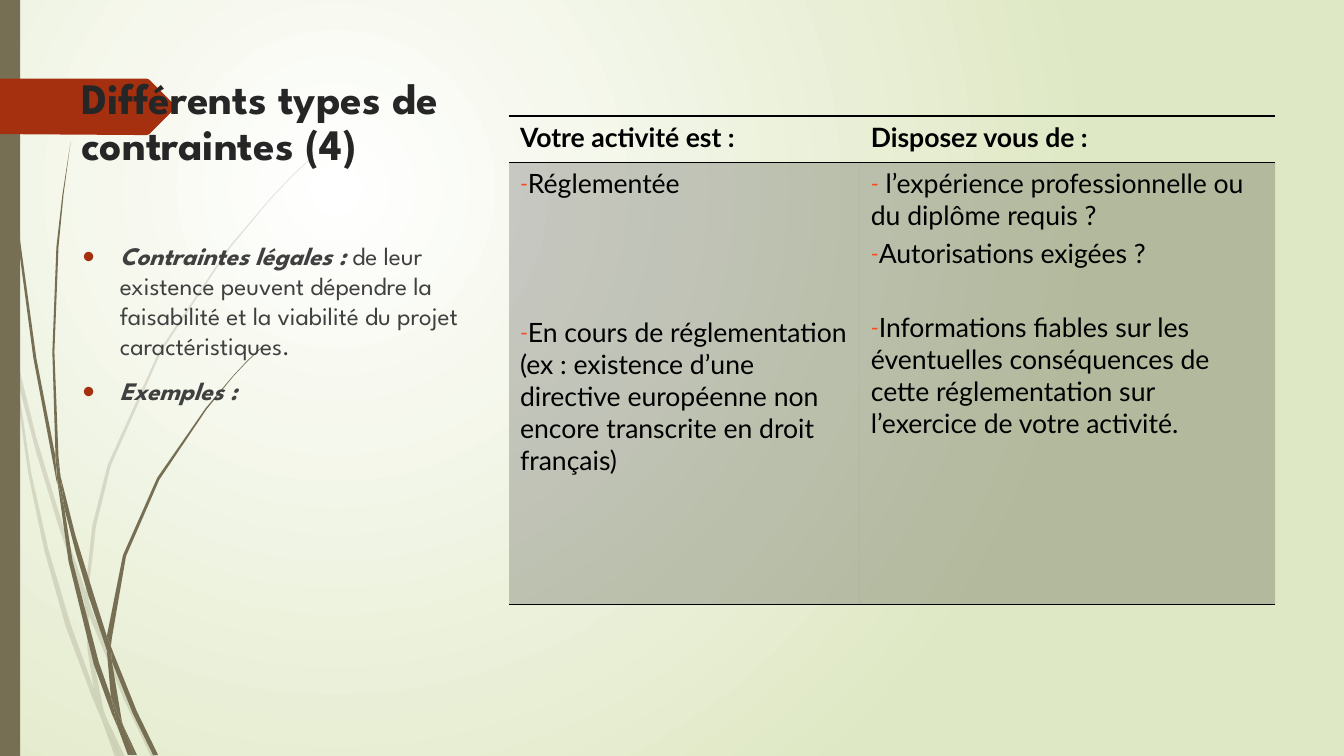
"""Build the slide on legal constraints with its activity table."""
from lxml.etree import SubElement
from pptx import Presentation
from pptx.dml.color import RGBColor
from pptx.enum.shapes import MSO_SHAPE
from pptx.enum.text import MSO_ANCHOR
from pptx.oxml.ns import qn
from pptx.util import Pt

COLOURS = {"white": "FFFFFF", "green": "DFE8C4", "olive": "766F54", "rust": "A53010",
           "title": "262626", "body": "404040", "ink": "000000", "dash": "FB4A18"}
FORMATS = {
    "title": {"name": "League Spartan", "size": Pt(31), "bold": True},
    "body": {"name": "League Spartan", "size": Pt(18), "bold": False, "italic": False},
    "strong": {"name": "League Spartan", "size": Pt(18), "bold": True, "italic": True},
    "header": {"name": "Lato", "size": Pt(19), "bold": True},
    "cell": {"name": "Lato", "size": Pt(19), "bold": False},
}

TITLE = "Différents types de contraintes (4)"
CONSTRAINTS = [
    [("Contraintes légales :", "strong"),
     (" de leur existence peuvent dépendre la faisabilité et la viabilité du projet "
      "caractéristiques.", "body")],
    [("Exemples :", "strong")],
]
HEADERS = ["Votre activité est :", "Disposez vous de :"]
ANSWERS = [
    [(0, "Réglementée"),
     (83.5, "En cours de réglementation (ex : existence d’une directive européenne non "
            "encore transcrite en droit français)")],
    [(0, " l’expérience professionnelle ou du diplôme requis ?"),
     (4.5, "Autorisations exigées ?"),
     (30, "Informations fiables sur les éventuelles conséquences de cette réglementation "
          "sur l’exercice de votre activité.")],
]
COLUMN_WIDTHS = [250.6, 296.6]
ROW_HEIGHTS = [33.3, 315.9]

FAINT_STALKS = [
    [(7.9, 252), (6.5, 231.8), (0, 203), (0, 215.3), (7.2, 247.7)],
    [(41.8, 375.8), (60.5, 431.3), (61.2, 421.9), (44.6, 374.4), (25.9, 312.5),
     (10.1, 248.4), (12.2, 270.7), (25.9, 323.3)],
    [(66.2, 437), (63.4, 429.1), (63.4, 439.2), (88.6, 499.7), (108, 540.7),
     (111.6, 540.7), (91.4, 498.2)],
    [(85.7, 540.7), (89.3, 540.7), (75.6, 511.9)],
    [(67, 491.8), (50.4, 445.7), (34.5, 392.2), (22.3, 337.7), (12.2, 270.7), (7.9, 252),
     (20.2, 338.4), (31.6, 393), (46.8, 447.1), (66.2, 499), (72.7, 514.1), (71.3, 509)],
    [(60.5, 431.3), (62.6, 465.1), (67, 491.8), (69.1, 498.2), (75.6, 511.9),
     (74.2, 508.3), (65.5, 465.1), (63.4, 439.2), (63.4, 437.8)],
    [(63.4, 420.5), (68.6, 375.8), (79.2, 332.6), (115.2, 251.3), (164.9, 176.4),
     (193, 142.6), (208.8, 126), (224.6, 110.9), (224.6, 110.2), (208.1, 126),
     (193, 141.8), (164.2, 175.7), (113.8, 250.6), (77, 331.9), (65.9, 375.8),
     (61.2, 420.5), (61.2, 421.9), (63.4, 429.1)],
    [(72.7, 514.1), (82.1, 540.7), (85.7, 540.7)],
    [(63.4, 437.8), (63.4, 429.1), (61.2, 421.9), (60.5, 431.3)],
    [(69.1, 498.2), (67, 491.8), (71.3, 509), (72.7, 514.1), (85.7, 540.7), (75.6, 511.9)],
]
DARK_STALKS = [
    [(5, 79.2), (12.2, 167.8), (23.8, 255.6), (40.3, 343.4), (41, 346.3), (39.6, 329),
     (39.6, 326.2), (25.9, 255.6), (13.7, 167), (5.8, 78.5), (3.6, 34.6), (2.9, 0),
     (2.2, 0), (2.9, 34.6)],
    [(63.4, 426.2), (76.3, 464.4), (76.3, 454.3), (67, 424.8), (54, 382.9), (43.2, 339.8),
     (46.1, 363.6), (54.2, 394.9)],
    [(81.4, 467.3), (79.2, 461.5), (79.9, 472.3), (95, 509.8), (109.4, 539.3),
     (113, 539.3), (97.9, 508.3)],
    [(79.2, 497.5), (70.6, 473), (51.8, 400.3), (46.1, 363.6), (41, 343.4), (49, 401),
     (67, 474.5), (79.9, 509.8), (84.2, 519.8), (83.5, 516.2)],
    [(43.2, 339.8), (41.8, 326.2), (38.9, 251.3), (41.8, 176.4), (45.4, 139),
     (50.4, 101.5), (44.6, 139), (40.3, 176.4), (37.4, 251.3), (39.6, 323.3)],
    [(95.8, 539.3), (97.9, 539.3), (87.8, 517.7)],
    [(41, 343.4), (46.1, 363.6), (43.2, 339.8), (39.6, 323.3), (39.6, 326.2)],
    [(79.9, 455.8), (90, 397.4), (113.8, 342.7), (147.6, 292.3), (166.3, 269.3),
     (176.4, 258.5), (187.9, 247.7), (187.2, 247.7), (176.4, 257.8), (166.3, 268.6),
     (146.9, 291.6), (112.3, 341.3), (87.8, 396.7), (76.3, 454.3), (79.2, 461.5)],
    [(84.2, 519.8), (91.4, 539.3), (94.3, 539.3)],
    [(76.3, 464.4), (79.2, 497.5), (83.5, 508.3), (87.8, 517.7), (87.1, 515.5),
     (79.9, 472.3), (78.5, 468.7)],
    [(76.3, 464.4), (78.5, 468.7), (79.9, 472.3), (79.2, 461.5), (76.3, 454.3)],
    [(83.5, 508.3), (79.2, 497.5), (83.5, 516.2), (84.2, 519.8), (93.6, 539.3),
     (95.8, 539.3), (87.8, 517.7)],
]
MARKER = [(0, 56.2), (105, 56.2), (106.6, 56.9), (124.6, 74.9), (125.2, 76.3),
          (124.6, 77.8), (106.6, 95.8), (105, 96.5), (0, 95.8)]


def rgb(colour):
    return RGBColor.from_string(COLOURS[colour])


def paint(fill, colour, holder, opacity=100):
    fill.solid()
    fill.fore_color.rgb = rgb(colour)
    if opacity < 100:
        tint = holder.find(qn("a:solidFill")).find(qn("a:srgbClr"))
        SubElement(tint, qn("a:alpha"), val=str(opacity * 1000))


def finish(shape, colour, opacity=100):
    shape.shadow.inherit = False
    shape.line.fill.background()
    paint(shape.fill, colour, shape._element.spPr, opacity)


def write(paragraph, text, style, colour):
    run = paragraph.add_run()
    run.text = text
    for attribute, value in FORMATS[style].items():
        setattr(run.font, attribute, value)
    run.font.color.rgb = rgb(colour)


def add_bullet(paragraph, character, colour, hang=0, percent=100):
    properties = paragraph._p.get_or_add_pPr()
    properties.set("marL", str(Pt(hang)))
    properties.set("indent", str(-Pt(hang)))
    SubElement(SubElement(properties, qn("a:buClr")), qn("a:srgbClr"), val=COLOURS[colour])
    SubElement(properties, qn("a:buSzPct"), val=str(percent * 1000))
    SubElement(properties, qn("a:buFont"), typeface="Lato")
    SubElement(properties, qn("a:buChar"), char=character)


def paragraph_at(frame, index):
    return frame.add_paragraph() if index else frame.paragraphs[0]


def add_outline(slide, corners, colour, opacity=100):
    start, *rest = [(Pt(x), Pt(y)) for x, y in corners]
    builder = slide.shapes.build_freeform(*start)
    builder.add_line_segments(rest, close=True)
    finish(builder.convert_to_shape(), colour, opacity)


def add_text_frame(slide, top, height):
    frame = slide.shapes.add_textbox(Pt(51.1), Pt(top), Pt(287.3), Pt(height)).text_frame
    frame.word_wrap = True
    frame.vertical_anchor = MSO_ANCHOR.TOP
    return frame


def add_backdrop(slide):
    fill = slide.background.fill
    fill.gradient()
    for stop, colour, position in zip(fill.gradient_stops, ("white", "green"), (0, 1)):
        stop.color.rgb = rgb(colour)
        stop.position = position
    gradient = next(slide._element.iter(qn("a:gradFill")))
    gradient.remove(gradient.find(qn("a:lin")))
    glow = SubElement(gradient, qn("a:path"), path="circle")
    SubElement(glow, qn("a:fillToRect"), l="50000", t="50000", r="100000", b="100000")
    for stalks, opacity in ((FAINT_STALKS, 20), (DARK_STALKS, 100)):
        for corners in stalks:
            add_outline(slide, corners, "olive", opacity)
    band = slide.shapes.add_shape(MSO_SHAPE.RECTANGLE, 0, 0, Pt(14.4), Pt(540))
    finish(band, "olive")
    add_outline(slide, MARKER, "rust")


def add_border(cell, position, side):
    line = cell._tc.get_or_add_tcPr().makeelement(qn(f"a:{side}"), w=str(Pt(1)))
    SubElement(SubElement(line, qn("a:solidFill")), qn("a:srgbClr"), val=COLOURS["ink"])
    cell._tc.tcPr.insert(position, line)


def add_activity_table(slide):
    frame = slide.shapes.add_table(2, 2, Pt(363.6), Pt(82.8), Pt(sum(COLUMN_WIDTHS)),
                                   Pt(sum(ROW_HEIGHTS)))
    table = frame.table
    table.first_row = table.horz_banding = False
    style = next(frame._element.iter(qn("a:tableStyleId")))
    style.text = "{2D5ABB26-0587-4C30-8999-92F81FD0307C}"
    for row, height in zip(table.rows, ROW_HEIGHTS):
        row.height = Pt(height)
    for index, (width, header, answers) in enumerate(zip(COLUMN_WIDTHS, HEADERS, ANSWERS)):
        table.columns[index].width = Pt(width)
        heading, answer = table.cell(0, index), table.cell(1, index)
        write(heading.text_frame.paragraphs[0], header, "header", "ink")
        heading.fill.background()
        for order, (gap, text) in enumerate(answers):
            paragraph = paragraph_at(answer.text_frame, order)
            paragraph.space_before = Pt(gap)
            add_bullet(paragraph, "-", "dash", percent=80)
            write(paragraph, text, "cell", "ink")
        paint(answer.fill, "ink", answer._tc.tcPr, 20)
        for cell in (heading, answer):
            cell.margin_left = cell.margin_right = Pt(7.9)
            for position, side in enumerate(("lnT", "lnB")):
                add_border(cell, position, side)


def main():
    deck = Presentation()
    deck.slide_width, deck.slide_height = Pt(960), Pt(540)
    slide = deck.slides.add_slide(deck.slide_layouts[6])
    add_backdrop(slide)
    heading = add_text_frame(slide, 51.1, 99.4).paragraphs[0]
    heading.line_spacing = 0.9
    write(heading, TITLE, "title", "title")
    body = add_text_frame(slide, 167.8, 295.9)
    for index, runs in enumerate(CONSTRAINTS):
        paragraph = paragraph_at(body, index)
        paragraph.space_before = Pt(10)
        add_bullet(paragraph, "•", "rust", hang=27.4)
        for text, style in runs:
            write(paragraph, text, style, "body")
    add_activity_table(slide)
    deck.save("out.pptx")


if __name__ == "__main__":
    main()
